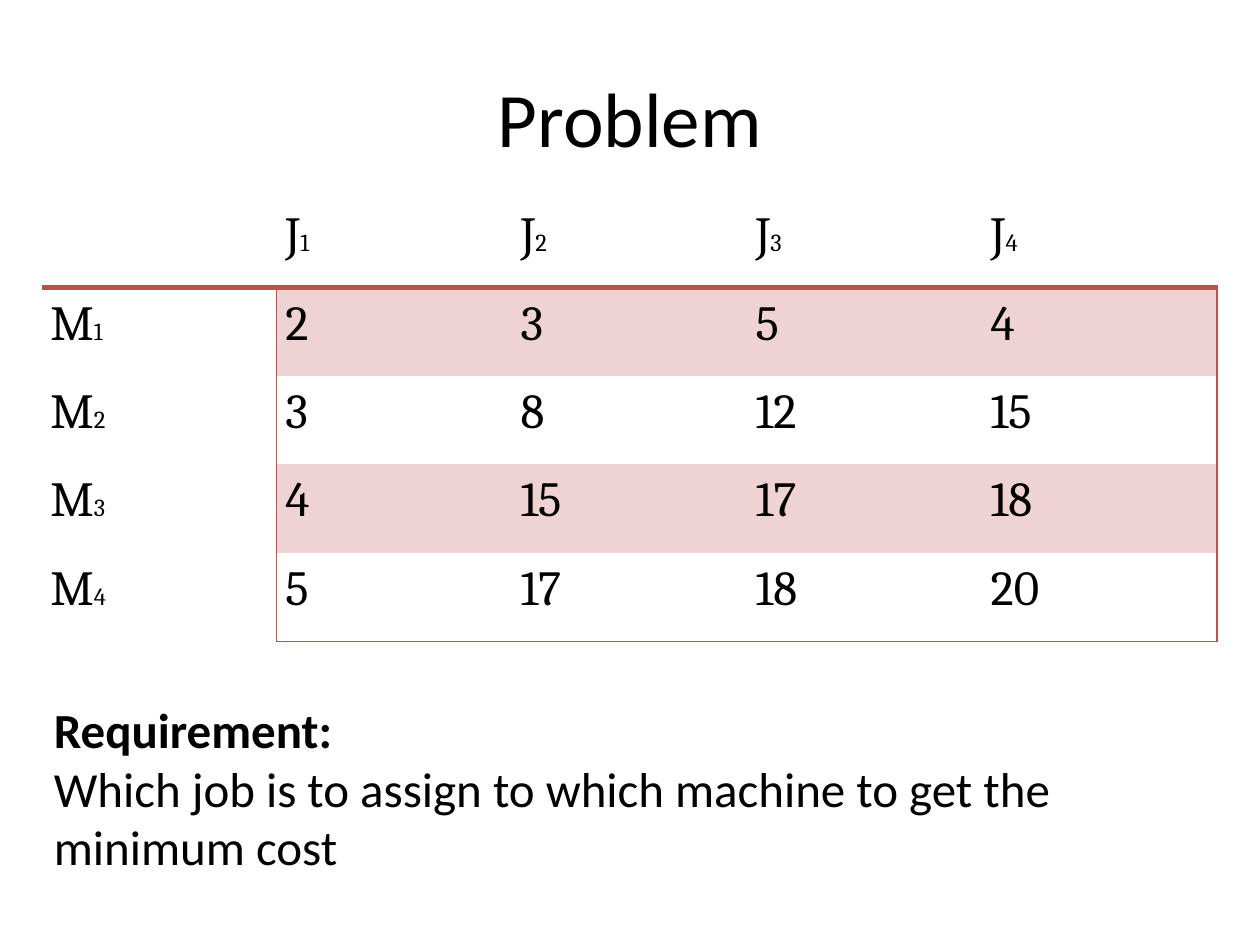
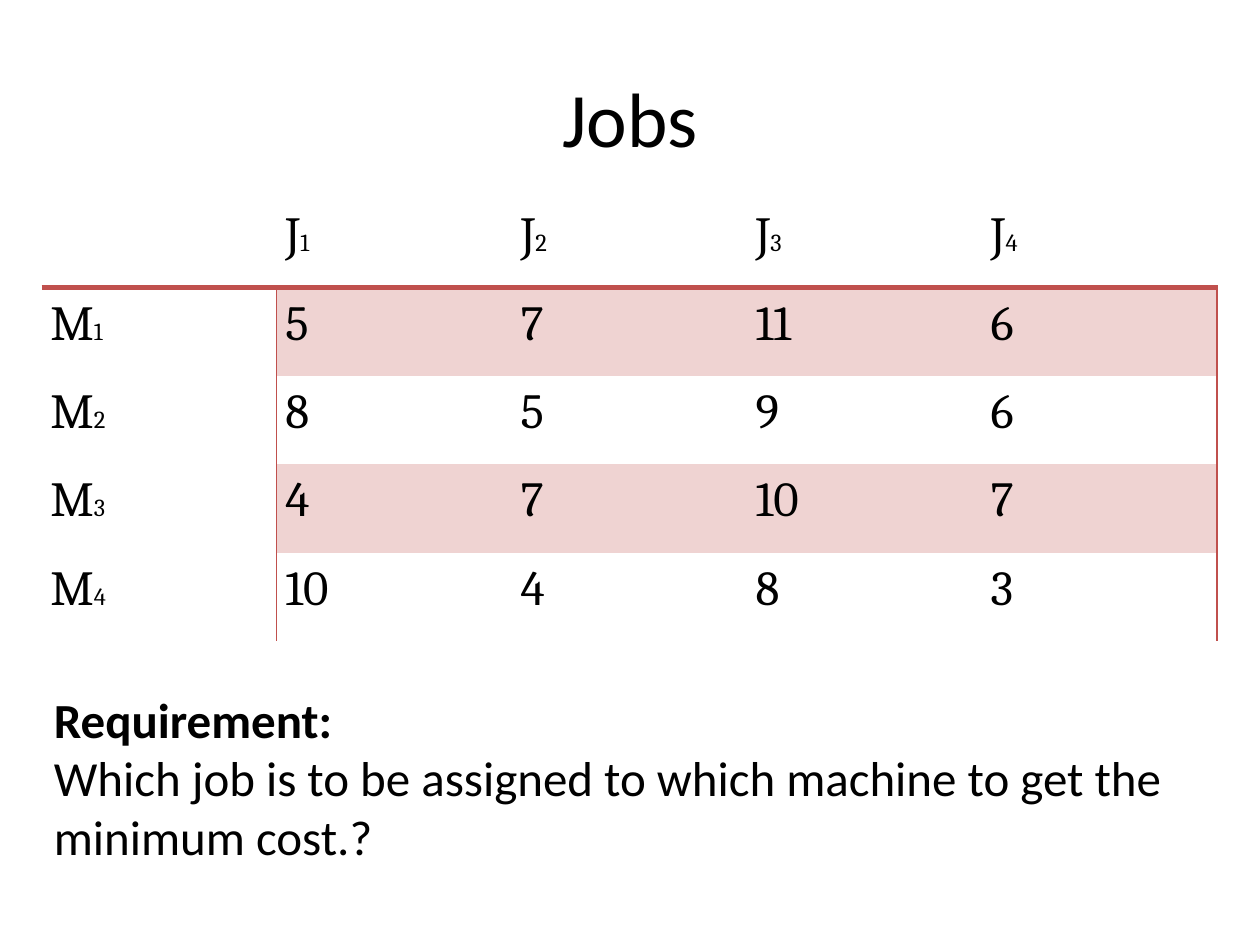
import pptx
import pptx.util
import pptx.dml.color
import pptx.enum.text
from lxml import etree
from pptx.oxml.ns import qn

Inches, Pt = pptx.util.Inches, pptx.util.Pt
RGBColor = pptx.dml.color.RGBColor
PP_ALIGN = pptx.enum.text.PP_ALIGN
MSO_ANCHOR = pptx.enum.text.MSO_ANCHOR

BLACK = RGBColor(0x00, 0x00, 0x00)
WHITE = RGBColor(0xFF, 0xFF, 0xFF)
RULE_RED = RGBColor(0xC0, 0x50, 0x4D)
BAND_PINK = RGBColor(0xEF, 0xD3, 0xD2)

BODY_FONT = "Calibri"
TABLE_FONT = "Cambria"
TEXT_SIZE = 28
INDEX_SIZE = 14
LEFT = 0.33
TITLE_ONLY = 5


def add_text(paragraph, text, size=TEXT_SIZE, font=BODY_FONT, bold=False,
             align=None, spacing=None):
    """Append a formatted run to the paragraph."""
    if align is not None:
        paragraph.alignment = align
    if spacing is not None:
        paragraph.line_spacing = spacing
    run = paragraph.add_run()
    run.text = text
    run.font.size = Pt(size)
    run.font.name = font
    run.font.bold = bold
    run.font.color.rgb = BLACK


def add_title(slide, text):
    title = slide.shapes.title
    title.left, title.top = Inches(0.5), Inches(0.3)
    title.width, title.height = Inches(9), Inches(1.25)
    title.text_frame.vertical_anchor = MSO_ANCHOR.MIDDLE
    add_text(title.text_frame.paragraphs[0], text, size=44,
             align=PP_ALIGN.CENTER)


def set_borders(cell, widths):
    """Draw the sides named in widths (L, R, T, B: points), clear the others."""
    properties = cell._tc.get_or_add_tcPr()
    for side in "LRTB":
        line = etree.SubElement(properties, qn(f"a:ln{side}"))
        if side in widths:
            line.set("w", str(Pt(widths[side])))
            fill = etree.SubElement(line, qn("a:solidFill"))
            etree.SubElement(fill, qn("a:srgbClr"), val=str(RULE_RED))
        else:
            etree.SubElement(line, qn("a:noFill"))


def border_widths(row, column, size, closed):
    """Rule under the header, box around the costs, bottom only if closed."""
    last = size - 1
    widths = {}
    if row == 0:
        widths["B"] = 3
        return widths
    if row == 1:
        widths["T"] = 3
    if column == 1:
        widths["L"] = 1
    if column in (0, last):
        widths["R"] = 1
    if closed and row == last and column > 0:
        widths["B"] = 1
    return widths


def fill_cell(cell, text, index=""):
    cell.margin_left = cell.margin_right = Inches(0.07)
    cell.margin_top = cell.margin_bottom = 0
    paragraph = cell.text_frame.paragraphs[0]
    if text:
        add_text(paragraph, text, font=TABLE_FONT, spacing=1.15)
    if index:
        add_text(paragraph, index, size=INDEX_SIZE, font=TABLE_FONT)


def add_cost_table(slide, costs, closed):
    """Machines down, jobs across, with every second cost row tinted."""
    size = len(costs) + 1
    table = slide.shapes.add_table(size, size, Inches(LEFT), Inches(1.58),
                                   Inches(9.33), Inches(3.51)).table
    table.first_row = table.horz_banding = False
    for row in range(size):
        for column in range(size):
            cell = table.cell(row, column)
            if row and column:
                fill_cell(cell, str(costs[row - 1][column - 1]))
            elif column:
                fill_cell(cell, "J", str(column))
            elif row:
                fill_cell(cell, "M", str(row))
            else:
                fill_cell(cell, "")
            set_borders(cell, border_widths(row, column, size, closed))
            cell.fill.solid()
            tinted = column > 0 and row % 2 == 1
            cell.fill.fore_color.rgb = BAND_PINK if tinted else WHITE


def add_requirement(slide, question, top):
    frame = slide.shapes.add_textbox(Inches(LEFT), Inches(top), Inches(9.17),
                                     Inches(1.51)).text_frame
    frame.word_wrap = True
    add_text(frame.paragraphs[0], "Requirement:", bold=True)
    add_text(frame.add_paragraph(), question)


def add_problem_slide(deck, title, costs, question, question_top, closed):
    slide = deck.slides.add_slide(deck.slide_layouts[TITLE_ONLY])
    add_title(slide, title)
    add_cost_table(slide, costs, closed)
    add_requirement(slide, question, question_top)


def main():
    deck = pptx.Presentation()
    deck.slide_width, deck.slide_height = Inches(10), Inches(7.5)
    add_problem_slide(
        deck, "Problem",
        [[2, 3, 5, 4], [3, 8, 12, 15], [4, 15, 17, 18], [5, 17, 18, 20]],
        "Which job is to assign to which machine to get the minimum cost",
        question_top=5.5, closed=True)
    add_problem_slide(
        deck, "Jobs",
        [[5, 7, 11, 6], [8, 5, 9, 6], [4, 7, 10, 7], [10, 4, 8, 3]],
        "Which job is to be assigned to which machine to get the minimum cost.?",
        question_top=5.42, closed=False)
    deck.save("out.pptx")


if __name__ == "__main__":
    main()
